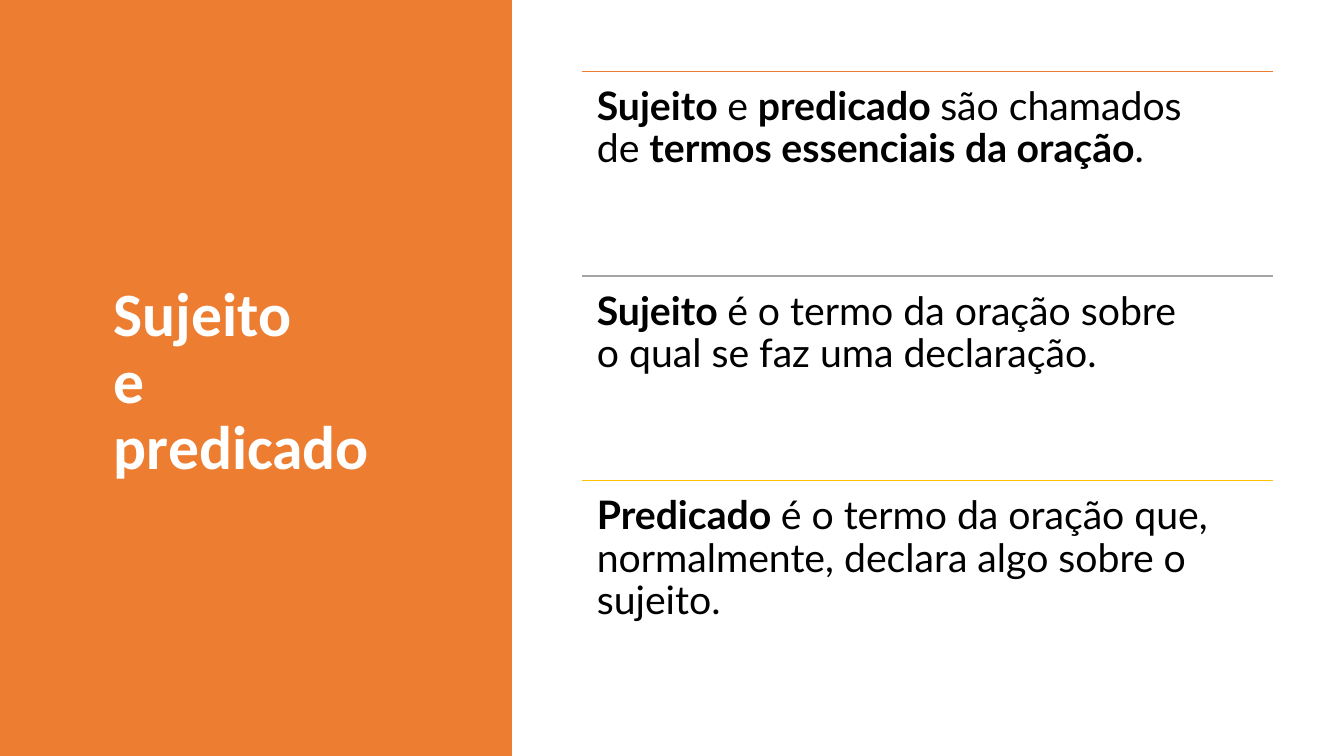
from dataclasses import dataclass

from lxml.etree import SubElement
from pptx import Presentation
from pptx.dml.color import RGBColor
from pptx.enum.shapes import MSO_CONNECTOR, MSO_SHAPE
from pptx.enum.text import MSO_ANCHOR
from pptx.oxml.ns import qn
from pptx.util import Inches, Pt


@dataclass(frozen=True)
class Theme:
    orange: RGBColor = RGBColor(0xED, 0x7D, 0x31)
    gray: RGBColor = RGBColor(0xA5, 0xA5, 0xA5)
    gold: RGBColor = RGBColor(0xFF, 0xC0, 0x00)
    white: RGBColor = RGBColor(0xFF, 0xFF, 0xFF)
    black: RGBColor = RGBColor(0, 0, 0)
    title_font: str = "Calibri"
    body_font: str = "Lato"
    title_size: Pt = Pt(44)
    body_size: Pt = Pt(28)
    rule_width: Pt = Pt(1)


def style_paragraph(paragraph, font_name, size, color):
    paragraph.line_spacing = 0.9
    paragraph.font.name = font_name
    paragraph.font.size = size
    paragraph.font.color.rgb = color


theme = Theme()
presentation = Presentation()
presentation.slide_width = Inches(13.33)
presentation.slide_height = Inches(7.5)
slide = presentation.slides.add_slide(presentation.slide_layouts[6])
shapes = slide.shapes

# Left panel
panel = shapes.add_shape(MSO_SHAPE.RECTANGLE, 0, 0, Inches(5.07), Inches(7.5))
panel.shadow.inherit = False
panel.fill.solid()
panel.fill.fore_color.rgb = theme.orange
panel.line.color.rgb = theme.orange
panel.line.width = theme.rule_width

# Definitions: rule color, text width, (text, bold) runs
definitions = [
    (theme.orange, 6.47, [
        ("Sujeito ", True), ("e ", False), ("predicado ", True),
        ("são chamados de ", False),
        ("termos essenciais da oração", True), (".", False)]),
    (theme.gray, 6.17, [
        ("Sujeito ", True),
        ("é o termo da oração sobre o qual se faz uma declaração.", False)]),
    (theme.gold, 6.41, [
        ("Predicado ", True),
        ("é o termo da oração que, normalmente, declara algo sobre o sujeito.",
         False)]),
]
left, right = Inches(5.77), Inches(12.63)
first_top, row_height = Inches(0.71), Inches(2.03)

for row, (rule_color, text_width, runs) in enumerate(definitions):
    top = first_top + row * row_height
    rule = shapes.add_connector(MSO_CONNECTOR.STRAIGHT, left, top, right, top)
    rule.line.color.rgb = rule_color
    rule.line.width = theme.rule_width
    SubElement(rule._element.spPr, qn("a:effectLst"))

    definition = shapes.add_textbox(left, top, Inches(text_width), row_height)
    frame = definition.text_frame
    frame.word_wrap = True
    frame.margin_left = frame.margin_right = Inches(0.15)
    frame.margin_top = frame.margin_bottom = Inches(0.15)
    paragraph = frame.paragraphs[0]
    style_paragraph(paragraph, theme.body_font, theme.body_size, theme.black)
    paragraph.space_after = Pt(12.2)
    for text, bold in runs:
        run = paragraph.add_run()
        run.text = text
        run.font.bold = bold

# Title
title = shapes.add_textbox(Inches(1.03), Inches(0.79), Inches(3.69), Inches(6.02))
title_frame = title.text_frame
title_frame.word_wrap = True
title_frame.vertical_anchor = MSO_ANCHOR.MIDDLE
title_frame.text = "Sujeito\ne\npredicado"
for paragraph in title_frame.paragraphs:
    style_paragraph(paragraph, theme.title_font, theme.title_size, theme.white)
    paragraph.font.bold = True

presentation.save("out.pptx")
